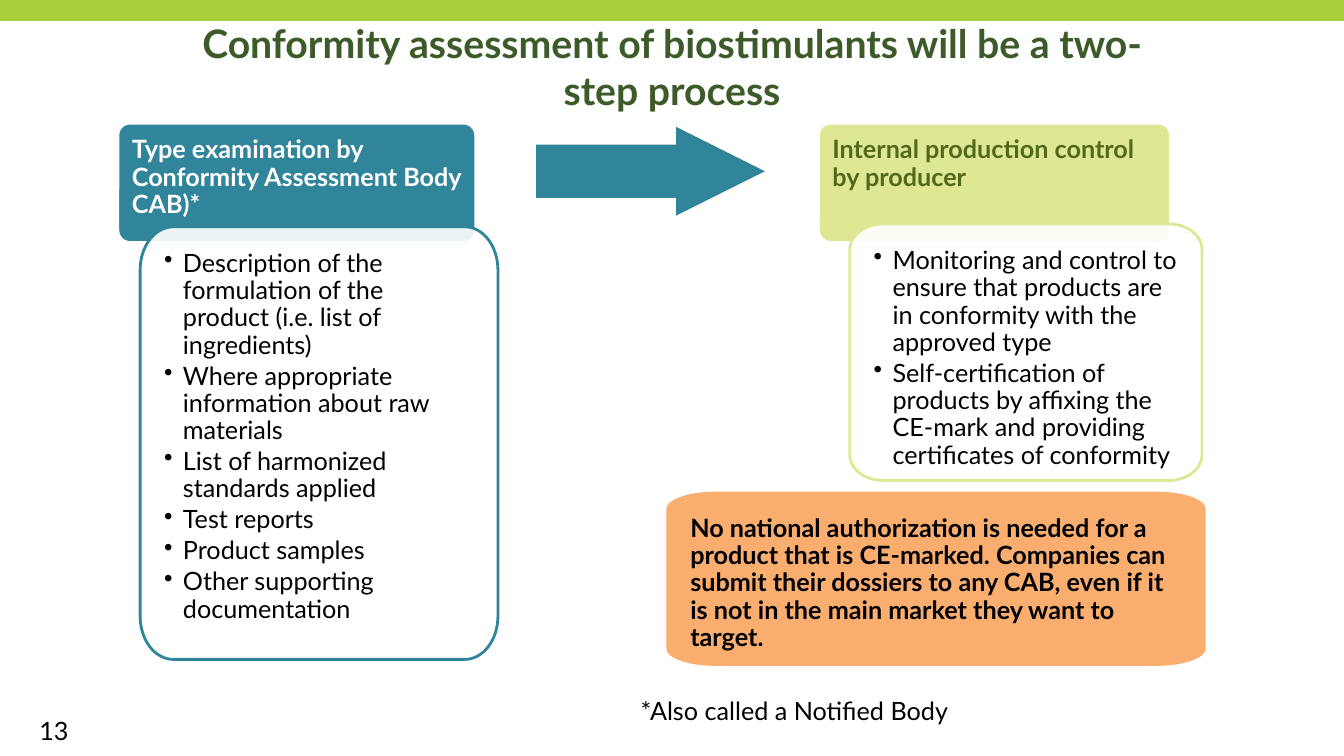
"""Build the slide on the two-step conformity assessment of biostimulants."""
from math import cos, pi, sin

from lxml.etree import SubElement
from pptx import Presentation
from pptx.dml.color import RGBColor
from pptx.enum.shapes import MSO_SHAPE as Shape
from pptx.enum.text import MSO_ANCHOR as Anchor, PP_ALIGN as Align
from pptx.oxml.ns import qn
from pptx.util import Pt

TEAL, LIME, WHITE = "31859B", "DEE894", "FFFFFF"
TITLE = "Conformity assessment of biostimulants will be a two-step process"
STEPS = [
    {
        "heading": "Type examination by Conformity Assessment Body CAB)*",
        "color": TEAL,
        "heading_color": WHITE,
        "heading_box": (84.2, 88, 255.6, 85.2),
        "panel_box": (100.1, 162, 255.6, 309),
        "points": [
            "Description of the formulation of the product (i.e. list of ingredients)",
            "Where appropriate information about raw materials",
            "List of harmonized standards applied",
            "Test reports",
            "Product samples",
            "Other supporting documentation",
        ],
    },
    {
        "heading": "Internal production control by producer",
        "color": LIME,
        "heading_color": "53691A",
        "heading_box": (584.6, 88, 251.6, 85.2),
        "panel_box": (607, 160, 251.6, 183.2),
        "points": [
            "Monitoring and control to ensure that products are in conformity with the approved type",
            "Self-certification of products by affixing the CE-mark and providing "
            "certificates of conformity",
        ],
    },
]
CALLOUT = ("No national authorization is needed for a product that is CE-marked. "
           "Companies can submit their dossiers to any CAB, even if it is not in "
           "the main market they want to target.")
FOOTNOTE = "*Also called a Notified Body"
PANEL_INSETS = (17.1,) * 4
HEADING_INSETS = (7.5, 7.5, 7.5, 31.5)


def rgb(value):
    return RGBColor.from_string(value)


def paint(shape, fill, line=None, opacity=None):
    shape.shadow.inherit = False
    shape.fill.solid()
    shape.fill.fore_color.rgb = rgb(fill)
    if opacity:
        color = shape.fill._xPr.find(qn("a:solidFill"))[0]
        SubElement(color, qn("a:alpha"), val=str(opacity * 1000))
    if line:
        shape.line.color.rgb = rgb(line)
        shape.line.width = Pt(2)
    else:
        shape.line.fill.background()


def write(shape, *texts, size=18, color="000000", bold=False, align=Align.LEFT,
          anchor=Anchor.TOP, insets=(7.2, 3.6, 7.2, 3.6), spacing=None,
          after=0, bullet=False):
    frame = shape.text_frame
    frame.word_wrap = True
    frame.vertical_anchor = anchor
    (frame.margin_left, frame.margin_top,
     frame.margin_right, frame.margin_bottom) = map(Pt, insets)
    for index, text in enumerate(texts):
        paragraph = frame.add_paragraph() if index else frame.paragraphs[0]
        paragraph.alignment = align
        paragraph.line_spacing = spacing
        paragraph.space_after = Pt(after)
        if bullet:
            properties = paragraph._p.get_or_add_pPr()
            properties.set("marL", str(Pt(13.5)))
            properties.set("indent", str(-Pt(13.5)))
            SubElement(properties, qn("a:buChar"), char="•")
        run = paragraph.add_run()
        run.text = text
        run.font.name = "Lato"
        run.font.size = Pt(size)
        run.font.bold = bold
        run.font.color.rgb = rgb(color)


def add_box(slide, kind, box):
    return slide.shapes.add_shape(kind, *map(Pt, box))


def add_text(slide, box, text, **style):
    write(slide.shapes.add_textbox(*map(Pt, box)), text, **style)


def add_panel(slide, box, radius_x, radius_y, steps=16):
    left, top, width, height = box
    right, bottom = left + width - radius_x, top + height - radius_y
    centres = [(right, bottom), (left + radius_x, bottom),
               (left + radius_x, top + radius_y), (right, top + radius_y)]
    outline = []
    for quarter, (x, y) in enumerate(centres):
        for step in range(steps + 1):
            angle = (quarter + step / steps) * pi / 2
            outline.append((Pt(x + radius_x * cos(angle)), Pt(y + radius_y * sin(angle))))
    builder = slide.shapes.build_freeform(*outline[0])
    builder.add_line_segments(outline[1:], close=True)
    return builder.convert_to_shape()


def add_step(slide, step):
    heading = add_box(slide, Shape.ROUNDED_RECTANGLE, step["heading_box"])
    heading.adjustments[0] = 0.1
    paint(heading, step["color"], WHITE)
    write(heading, step["heading"], color=step["heading_color"], bold=True,
          insets=HEADING_INSETS, spacing=0.9)
    panel = add_panel(slide, step["panel_box"], 23.7, step["panel_box"][3] / 10)
    paint(panel, WHITE, step["color"], opacity=90)
    write(panel, *step["points"], insets=PANEL_INSETS, spacing=0.9, after=2.7, bullet=True)


def main():
    presentation = Presentation()
    presentation.slide_width, presentation.slide_height = Pt(960), Pt(540)
    slide = presentation.slides.add_slide(presentation.slide_layouts[6])

    paint(add_box(slide, Shape.RECTANGLE, (0, 0, 960, 15)), "A7CE38")
    add_text(slide, (21, 507.6, 126, 21.6), "13")
    add_text(slide, (137, 18.7, 686, 57.6), TITLE, size=28, color="3D5A29", bold=True,
             align=Align.CENTER, anchor=Anchor.MIDDLE)

    for step in STEPS:
        add_step(slide, step)

    arrow = add_box(slide, Shape.RIGHT_ARROW, (383, 90.6, 163.4, 63.4))
    arrow.adjustments[0], arrow.adjustments[1] = 0.6, 1
    paint(arrow, TEAL)

    callout = add_panel(slide, (476, 351.2, 385.2, 124.4), 35, 12.4)
    paint(callout, "F9A661", opacity=90)
    write(callout, CALLOUT, bold=True, insets=PANEL_INSETS, spacing=0.9)
    add_text(slide, (440.6, 489.6, 255.6, 39.6), FOOTNOTE, insets=PANEL_INSETS, spacing=0.9)

    presentation.save("out.pptx")


if __name__ == "__main__":
    main()
